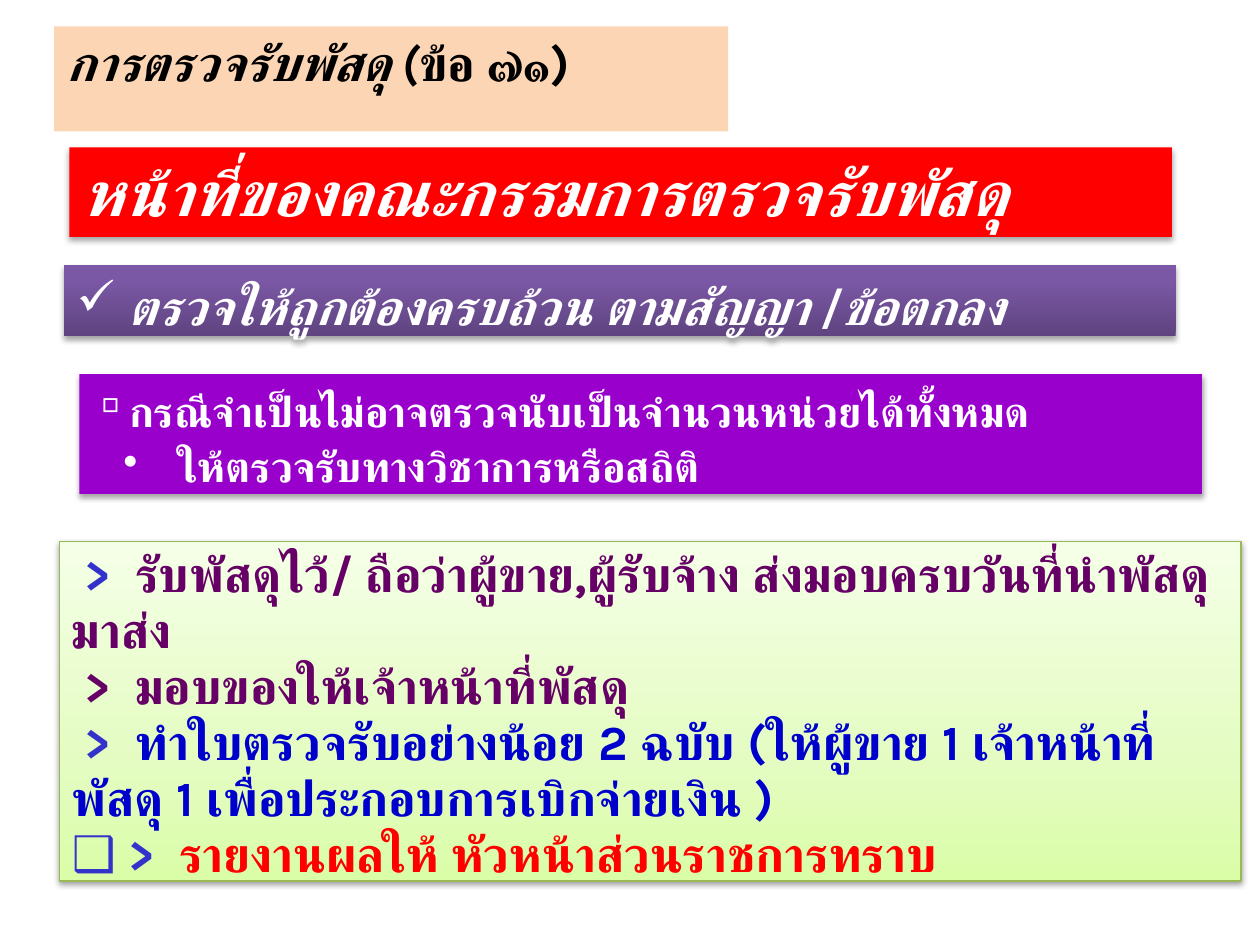
from dataclasses import dataclass
from typing import Optional

from lxml.etree import SubElement
from pptx import Presentation
from pptx.dml.color import RGBColor
from pptx.enum.shapes import MSO_SHAPE
from pptx.enum.text import MSO_ANCHOR, MSO_AUTO_SIZE, PP_ALIGN
from pptx.oxml import parse_xml
from pptx.oxml.ns import nsdecls, qn
from pptx.util import Inches, Pt

FONT = "Karla"
BLACK = RGBColor(0x00, 0x00, 0x00)
WHITE = RGBColor(0xFF, 0xFF, 0xFF)
RED = RGBColor(0xFF, 0x00, 0x00)
PEACH = RGBColor(0xFC, 0xD5, 0xB5)
VIOLET = RGBColor(0x99, 0x00, 0xCC)
INDIGO = RGBColor(0x33, 0x33, 0xCC)
PLUM = RGBColor(0x66, 0x00, 0x66)
BLUE = RGBColor(0x00, 0x00, 0xCC)
OLIVE = RGBColor(0x98, 0xB9, 0x55)
# Gradients run from bottom to top: (percent, colour)
PURPLE_GRADIENT = [(0, RGBColor(0x5F, 0x44, 0x80)), (80, RGBColor(0x7B, 0x58, 0xA6)),
                   (100, RGBColor(0x7C, 0x57, 0xA8))]
GREEN_GRADIENT = [(0, RGBColor(0xDA, 0xFD, 0xA7)), (35, RGBColor(0xE4, 0xFC, 0xC2)),
                  (100, RGBColor(0xF5, 0xFF, 0xE7))]


@dataclass
class Piece:
    text: str
    color: RGBColor
    italic: bool = False


@dataclass
class Line:
    pieces: list[Piece]
    bullet: Optional[str] = None
    level: int = 0
    margin: float = 0
    indent: float = 0


@dataclass
class Panel:
    box: tuple[float, float, float, float]
    fill: RGBColor | list[tuple[int, RGBColor]]
    size: int
    lines: list[Line]
    spacing: float = 1.0
    outline: Optional[RGBColor] = None
    shadow: Optional[tuple[int, float]] = None  # opacity percent, distance in points


def paint(shape, panel: Panel) -> None:
    """Set the fill, outline and shadow of a panel."""
    if isinstance(panel.fill, RGBColor):
        shape.fill.solid()
        shape.fill.fore_color.rgb = panel.fill
    else:
        shape.fill.gradient()
        gradient = shape._element.spPr.find(qn("a:gradFill"))
        stops = gradient.find(qn("a:gsLst"))
        for stop in list(stops):
            stops.remove(stop)
        for percent, color in panel.fill:
            stop = SubElement(stops, qn("a:gs"), pos=str(percent * 1000))
            SubElement(stop, qn("a:srgbClr"), val=str(color))
        gradient.find(qn("a:lin")).set("ang", str(270 * 60000))
    if panel.outline is None:
        shape.line.fill.background()
    else:
        shape.line.color.rgb = panel.outline
        shape.line.width = Pt(0.75)
    shape.shadow.inherit = False
    if panel.shadow:
        opacity, distance = panel.shadow
        effects = shape._element.spPr.find(qn("a:effectLst"))
        effects.append(parse_xml(
            f'<a:outerShdw {nsdecls("a")} blurRad="{Pt(3.1)}" dist="{Pt(distance)}" '
            f'dir="5400000" rotWithShape="0"><a:srgbClr val="000000">'
            f'<a:alpha val="{opacity * 1000}"/></a:srgbClr></a:outerShdw>'))


def write_line(paragraph, line: Line, panel: Panel) -> None:
    """Write one paragraph with its bullet and coloured runs."""
    properties = paragraph._p.get_or_add_pPr()
    properties.set("marL", str(Inches(line.margin)))
    properties.set("indent", str(Inches(line.indent)))
    if line.bullet:
        SubElement(properties, qn("a:buChar"), char=line.bullet)
    else:
        SubElement(properties, qn("a:buNone"))
    paragraph.level = line.level
    paragraph.alignment = PP_ALIGN.LEFT
    paragraph.line_spacing = panel.spacing
    paragraph.space_before = Pt(0)
    for piece in line.pieces:
        run = paragraph.add_run()
        run.text = piece.text
        run.font.name = FONT
        run.font.size = Pt(panel.size)
        run.font.bold = True
        run.font.italic = piece.italic
        run.font.color.rgb = piece.color
        SubElement(run.font._element, qn("a:cs"), typeface=FONT)  # Thai script


def fill_panel(shape, panel: Panel) -> None:
    """Place, paint and write a panel."""
    shape.left, shape.top, shape.width, shape.height = map(Inches, panel.box)
    paint(shape, panel)
    text_frame = shape.text_frame
    text_frame.word_wrap = True
    text_frame.auto_size = MSO_AUTO_SIZE.SHAPE_TO_FIT_TEXT
    text_frame.vertical_anchor = MSO_ANCHOR.TOP
    for index, line in enumerate(panel.lines):
        paragraph = text_frame.add_paragraph() if index else text_frame.paragraphs[0]
        write_line(paragraph, line, panel)


TITLE = Panel((0.43, 0.21, 5.35, 0.57), PEACH, 28, [
    Line([Piece("การตรวจรับพัสดุ (", BLACK, True), Piece("ข้อ ๗๑)", BLACK)])])

BANNERS = [
    Panel((0.55, 1.17, 8.75, 0.71), RED, 36, [
        Line([Piece("หน้าที่ของคณะกรรมการตรวจรับพัสดุ", WHITE, True)])],
        shadow=(35, 1.8)),
    Panel((0.51, 2.1, 8.82, 0.57), PURPLE_GRADIENT, 28, [
        Line([Piece(" ", WHITE),
              Piece("ตรวจให้ถูกต้องครบถ้วน ตามสัญญา /ข้อตกลง", WHITE, True)], "✓")],
        spacing=1.1, shadow=(35, 1.8)),
    Panel((0.63, 2.97, 8.91, 0.95), VIOLET, 24, [
        Line([Piece("กรณีจำเป็นไม่อาจตรวจนับเป็นจำนวนหน่วยได้ทั้งหมด", WHITE)], "▫"),
        Line([Piece("ให้ตรวจรับทางวิชาการหรือสถิติ", WHITE)], "•", 1, 0.68, -0.43)],
        spacing=1.1, shadow=(35, 1.8)),
]

MARK = " >  "
DUTIES = Panel((0.47, 4.3, 9.38, 2.79), GREEN_GRADIENT, 28, [
    Line([Piece(MARK, INDIGO),
          Piece("รับพัสดุไว้/ ถือว่าผู้ขาย,ผู้รับจ้าง ส่งมอบครบวันที่นำพัสดุมาส่ง", PLUM)]),
    Line([Piece(MARK + "มอบของให้เจ้าหน้าที่พัสดุ", PLUM)]),
    Line([Piece(MARK, INDIGO),
          Piece("ทำใบตรวจรับอย่างน้อย 2 ฉบับ (ให้ผู้ขาย 1 เจ้าหน้าที่พัสดุ 1 "
                "เพื่อประกอบการเบิกจ่ายเงิน )", BLUE)]),
    Line([Piece(MARK, INDIGO), Piece("รายงานผลให้ หัวหน้าส่วนราชการทราบ", RED)], "❑")],
    spacing=0.95, outline=OLIVE, shadow=(38, 1.6))


def main() -> None:
    presentation = Presentation()
    presentation.slide_width, presentation.slide_height = Inches(10), Inches(7.5)
    slide = presentation.slides.add_slide(presentation.slide_layouts[1])

    # Title and list of duties
    fill_panel(slide.shapes.title, TITLE)
    fill_panel(slide.placeholders[1], DUTIES)

    # Banners between them
    for banner in BANNERS:
        shape = slide.shapes.add_shape(MSO_SHAPE.RECTANGLE, *map(Inches, banner.box))
        fill_panel(shape, banner)

    presentation.save("out.pptx")


if __name__ == "__main__":
    main()
